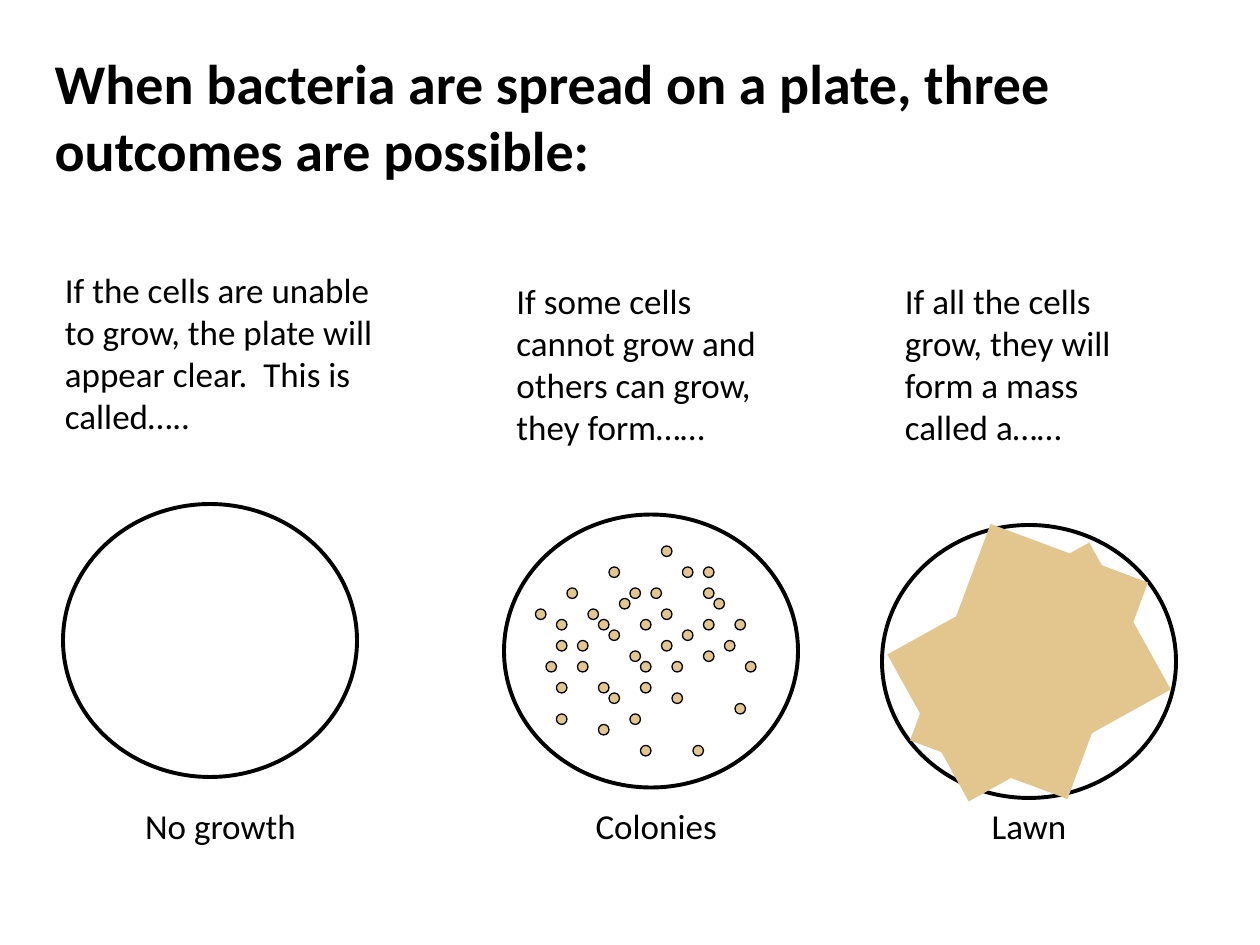
"""Build a slide on the three outcomes of spreading bacteria on a plate."""
from pptx import Presentation
from pptx import util as u
from pptx.dml.color import RGBColor
from pptx.enum import shapes, text

COLORS = {"ink": "000000", "plate": "FFFFFF", "bacteria": "E2C68E"}
STEP = 2.54 / 12


def write(shape, wording, box, size=20, bold=False, align=text.PP_ALIGN.LEFT):
    """Place a text shape on the grid and fill it with formatted wording."""
    shape.left, shape.top, shape.width, shape.height = [u.Cm(n * STEP) for n in box]
    frame = shape.text_frame
    frame.word_wrap = True
    frame.auto_size = text.MSO_AUTO_SIZE.NONE
    frame.vertical_anchor = text.MSO_ANCHOR.TOP
    paragraph = frame.paragraphs[0]
    paragraph.alignment = align
    run = paragraph.add_run()
    run.text = wording
    run.font.name = "Calibri"
    run.font.size = u.Pt(size)
    run.font.bold = bold
    run.font.color.rgb = RGBColor.from_string(COLORS["ink"])


def draw(kind, box, fill, line_width=0, rotation=0):
    """Draw a filled preset shape on the grid, outlined if a width is given."""
    shape = slide.shapes.add_shape(kind, *[u.Cm(n * STEP) for n in box])
    shape.shadow.inherit = False
    shape.rotation = rotation
    shape.fill.solid()
    shape.fill.fore_color.rgb = RGBColor.from_string(COLORS[fill])
    if line_width:
        shape.line.color.rgb = RGBColor.from_string(COLORS["ink"])
        shape.line.width = u.Pt(line_width)
    else:
        shape.line.fill.background()


presentation = Presentation()
presentation.slide_width = u.Cm(25.4)
presentation.slide_height = u.Cm(19.05)
slide = presentation.slides.add_slide(presentation.slide_layouts[5])

write(slide.shapes.title,
      "When bacteria are spread on a plate, three outcomes are possible:",
      (4, 4, 113, 14), size=32, bold=True)

outcomes = [
    ("If the cells are unable to grow, the plate will appear clear.  This is called…..",
     (5, 25, 32, 21), (6, 48), "No growth", (5, 76, 32, 5)),
    ("If some cells cannot grow and others can grow, they form……",
     (48, 26, 28, 17), (48, 49), "Colonies", (47, 76, 31, 5)),
    ("If all the cells grow, they will form a mass called a……",
     (85, 26, 26, 17), (84, 50), "Lawn", (85, 76, 26, 5)),
]
for description, description_box, plate_corner, label, label_box in outcomes:
    draw(shapes.MSO_SHAPE.OVAL, (*plate_corner, 28, 26), "plate", line_width=2.25)
    write(slide.shapes.add_textbox(0, 0, 0, 0), description, description_box)
    write(slide.shapes.add_textbox(0, 0, 0, 0), label, label_box,
          align=text.PP_ALIGN.CENTER)

for lawn_top, rotation in [(52, 20.4), (53, 61)]:
    draw(shapes.MSO_SHAPE.RECTANGLE, (90, lawn_top, 16, 22), "bacteria", rotation=rotation)

colony_rows = {
    52: [63],
    54: [58, 65, 67],
    56: [54, 60, 62, 67],
    57: [59, 68],
    58: [51, 56, 63],
    59: [53, 57, 61, 67, 70],
    60: [58, 65],
    61: [53, 55, 63, 69],
    62: [60, 67],
    63: [52, 55, 61, 64, 71],
    65: [53, 57, 61],
    66: [58, 64],
    67: [70],
    68: [53, 60],
    69: [57],
    71: [61, 66],
}
for colony_top, colony_lefts in colony_rows.items():
    for colony_left in colony_lefts:
        draw(shapes.MSO_SHAPE.OVAL, (colony_left, colony_top, 1, 1), "bacteria", line_width=0.75)

presentation.save("out.pptx")
